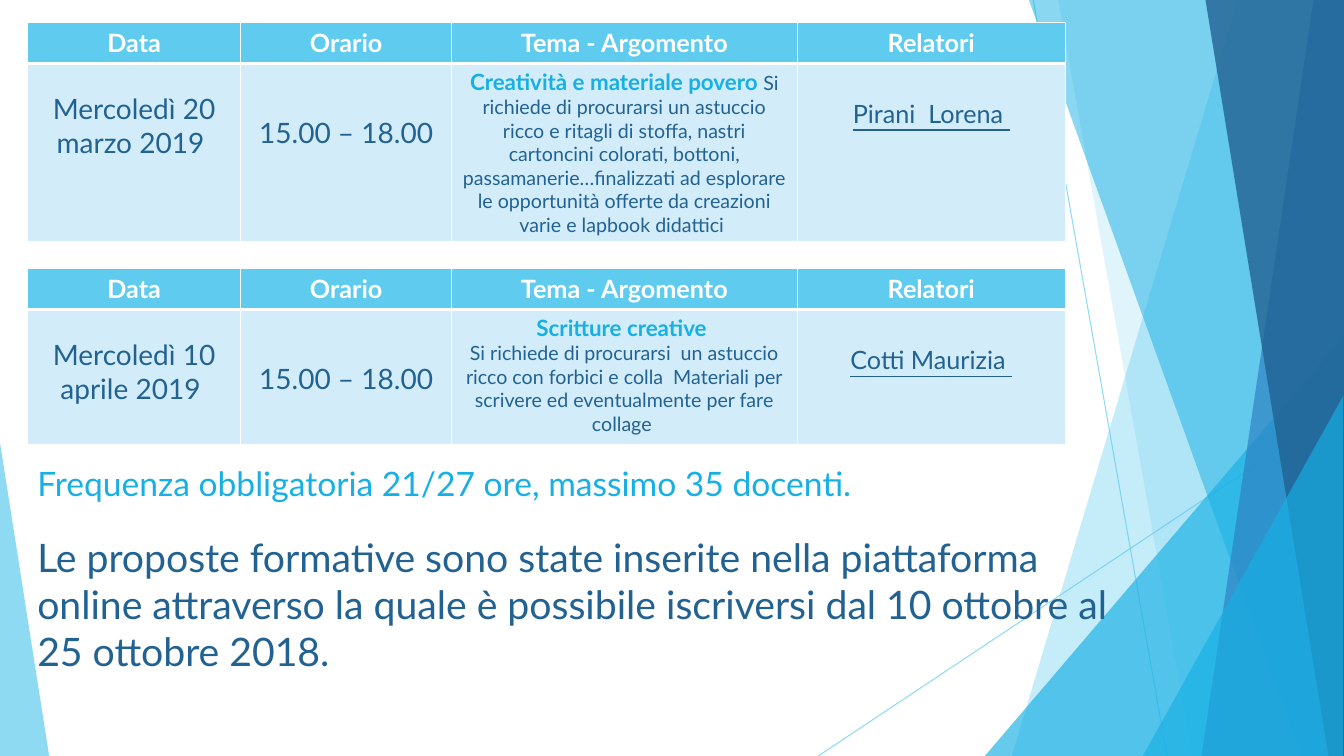
from lxml import etree
from pptx import Presentation
from pptx.dml.color import RGBColor
from pptx.enum import shapes, text
from pptx.oxml import ns
from pptx.util import Cm, Pt

WIDTH, HEIGHT = 33.87, 19.05
FONT = "Lato"
SKY, AZURE, BLUE, NAVY = "5FCBEF", "17B0E4", "2E83C3", "226292"
PALE, WHITE = "D2ECF9", "FFFFFF"

COLUMNS = [5.38, 5.31, 8.71, 6.76]
HEADERS = ["Data", "Orario", "Tema - Argomento", "Relatori"]
HEADER_HEIGHT = 1.04
TABLE_LEFT = 0.69


def rgb(hex_colour):
    return RGBColor.from_string(hex_colour)


def set_alpha(fill_parent, percent):
    colour = fill_parent.find(".//" + ns.qn("a:srgbClr"))
    etree.SubElement(colour, ns.qn("a:alpha"), val=str(percent * 1000))


def paint(sp, colour, opacity):
    sp.shadow.inherit = False
    sp.fill.solid()
    sp.fill.fore_color.rgb = rgb(colour)
    set_alpha(sp._element.spPr.find(ns.qn("a:solidFill")), opacity)
    sp.line.fill.background()


def add_line(slide, x1, y1, x2, y2):
    line = slide.shapes.add_connector(
        shapes.MSO_CONNECTOR.STRAIGHT, Cm(x1), Cm(y1), Cm(x2), Cm(y2))
    line.line.color.rgb = rgb(SKY)
    line.line.width = Pt(0.75)
    props = line._element.spPr
    set_alpha(props.find(ns.qn("a:ln")), 70)
    etree.SubElement(props, ns.qn("a:effectLst"))


def add_band(slide, top_x, bottom_x, colour, opacity):
    """Full-height panel from a slanted left side to the right slide edge."""
    outline = slide.shapes.build_freeform(Cm(top_x), 0)
    outline.add_line_segments([
        (Cm(WIDTH), 0), (Cm(WIDTH), Cm(HEIGHT)), (Cm(bottom_x), Cm(HEIGHT))])
    paint(outline.convert_to_shape(), colour, opacity)


def add_corner(slide, left, top, width, apex, colour, opacity):
    """Triangle standing on the slide bottom, apex 0 (left) to 1 (right)."""
    sp = slide.shapes.add_shape(
        shapes.MSO_SHAPE.ISOSCELES_TRIANGLE,
        Cm(left), Cm(top), Cm(width), Cm(HEIGHT - top))
    sp.adjustments[0] = apex
    paint(sp, colour, opacity)


def add_background(slide):
    add_line(slide, 26.04, 0, 29.41, HEIGHT)
    add_line(slide, WIDTH, 10.24, 20.62, HEIGHT)
    add_band(slide, 31.19, 25.5, SKY, 36)
    add_band(slide, 26.67, 30.05, SKY, 20)
    add_corner(slide, 24.82, 8.46, 9.05, 1, AZURE, 66)
    add_band(slide, 25.93, 32.79, AZURE, 50)
    add_band(slide, 33.1, 30.28, BLUE, 70)
    add_band(slide, 30.38, 33.48, NAVY, 80)
    add_corner(slide, 28.8, 9.98, 5.05, 1, AZURE, 66)
    add_corner(slide, 0, 11.15, 1.24, 0, SKY, 70)


def style_run(r, size, colour, bold=False, underline=None):
    r.font.name = FONT
    r.font.size = Pt(size)
    r.font.bold = bold
    r.font.underline = underline
    r.font.color.rgb = rgb(colour)


def set_borders(cell, top, bottom):
    props = cell._tc.get_or_add_tcPr()
    for side, points in (("L", 1), ("R", 1), ("T", top), ("B", bottom)):
        border = etree.SubElement(props, ns.qn("a:ln" + side), w=str(Pt(points)))
        fill = etree.SubElement(border, ns.qn("a:solidFill"))
        etree.SubElement(fill, ns.qn("a:srgbClr"), val=WHITE)


def fill_cell(cell, paragraphs, colour, borders, margin_top=0.13):
    """Each paragraph is a list of (text, style arguments) pairs."""
    set_borders(cell, *borders)
    cell.fill.solid()
    cell.fill.fore_color.rgb = rgb(colour)
    cell.margin_top = Cm(margin_top)
    tf = cell.text_frame
    for i, runs in enumerate(paragraphs):
        p = tf.add_paragraph() if i else tf.paragraphs[0]
        p.alignment = text.PP_ALIGN.CENTER
        for content, style in runs:
            r = p.add_run()
            r.text = content
            style_run(r, *style)


def add_session(slide, top, body_height, date, topic, speaker):
    frame = slide.shapes.add_table(
        2, len(COLUMNS), Cm(TABLE_LEFT), Cm(top),
        Cm(sum(COLUMNS)), Cm(HEADER_HEIGHT + body_height))
    table = frame.table
    table.horz_banding = False
    table.rows[0].height = Cm(HEADER_HEIGHT)
    table.rows[1].height = Cm(body_height)
    body = [
        ([[(date, (20, NAVY))]], 0.72),
        ([[("15.00 – 18.00", (20, NAVY))]], 1.31),
        (topic, 0.13),
        ([[(speaker, (18, NAVY, False, True))]], 0.89),
    ]
    for i, (header, (paragraphs, margin)) in enumerate(zip(HEADERS, body)):
        table.columns[i].width = Cm(COLUMNS[i])
        fill_cell(table.cell(0, i), [[(header, (18, WHITE, True))]], SKY, (1, 3))
        fill_cell(table.cell(1, i), paragraphs, PALE, (3, 1), margin)


def add_notice(slide):
    box = slide.shapes.add_textbox(Cm(TABLE_LEFT), Cm(11.53), Cm(27.86), Cm(6.4))
    tf = box.text_frame
    tf.word_wrap = True
    tf.text = "Frequenza obbligatoria 21/27 ore, massimo 35 docenti."
    style_run(tf.paragraphs[0].runs[0], 24, AZURE)
    p = tf.add_paragraph()
    p.text = ("Le proposte formative sono state inserite nella piattaforma "
              "online attraverso la quale è possibile iscriversi dal 10 ottobre "
              "al 25 ottobre 2018.")
    p.space_before = Pt(21.6)
    style_run(p.runs[0], 28, NAVY)


def main():
    prs = Presentation()
    prs.slide_width, prs.slide_height = Cm(WIDTH), Cm(HEIGHT)
    slide = prs.slides.add_slide(prs.slide_layouts[6])
    add_background(slide)
    add_notice(slide)
    heading, detail = (16, AZURE, True), (14, NAVY)
    add_session(slide, 0.56, 4.47, "Mercoledì 20 marzo 2019 ", [[
        ("Creatività e materiale povero ", heading),
        ("Si richiede di procurarsi un astuccio ricco e ritagli di stoffa, "
         "nastri cartoncini colorati, bottoni, passamanerie…finalizzati ad "
         "esplorare le opportunità offerte da creazioni varie e lapbook "
         "didattici ", detail),
    ]], "Pirani  Lorena ")
    add_session(slide, 6.76, 3.4, "Mercoledì 10 aprile 2019 ", [
        [("Scritture creative ", heading)],
        [("Si richiede di procurarsi  un astuccio ricco con forbici e colla  "
          "Materiali per scrivere ed eventualmente per fare collage ", detail)],
    ], "Cotti Maurizia ")
    prs.save("out.pptx")


if __name__ == "__main__":
    main()
